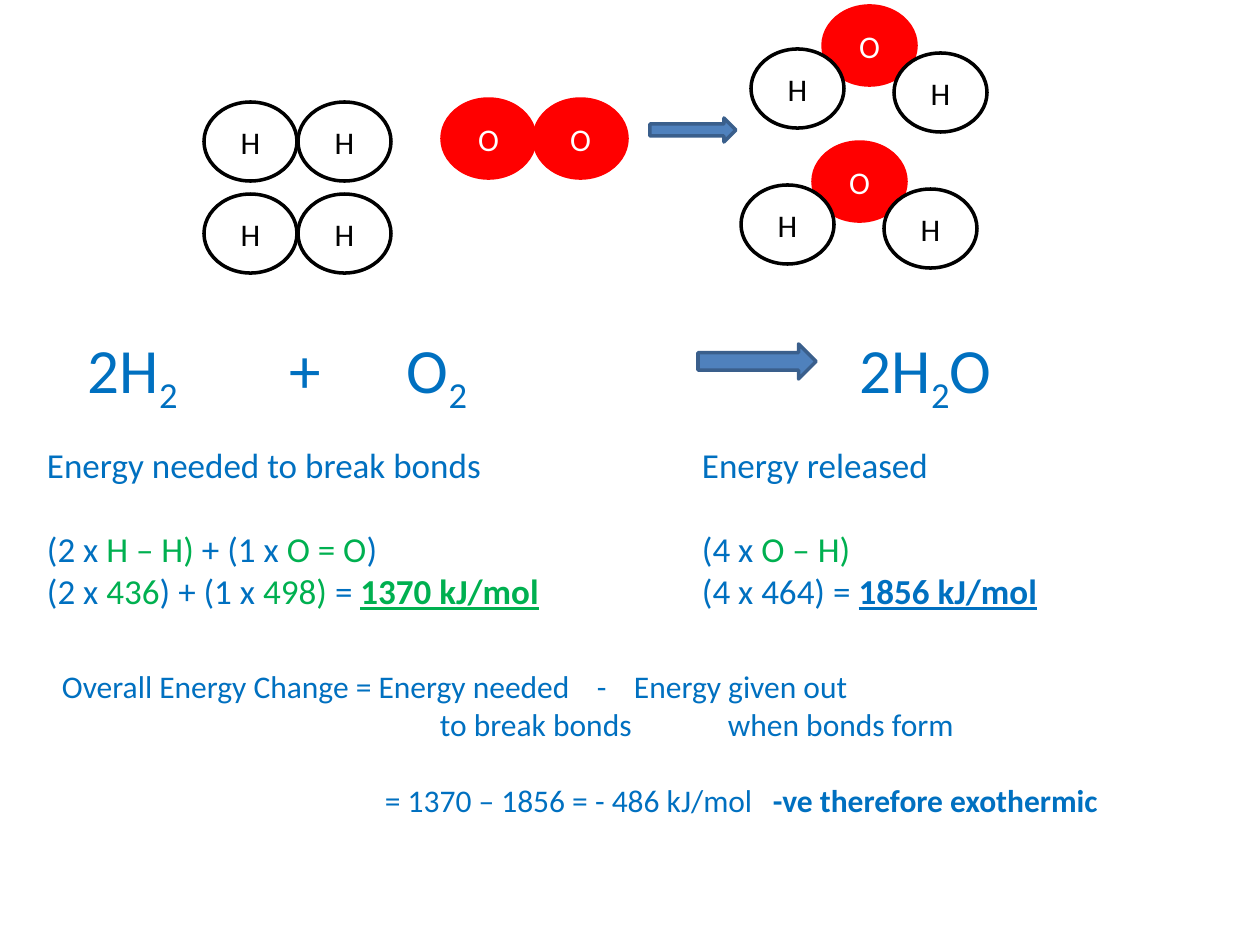
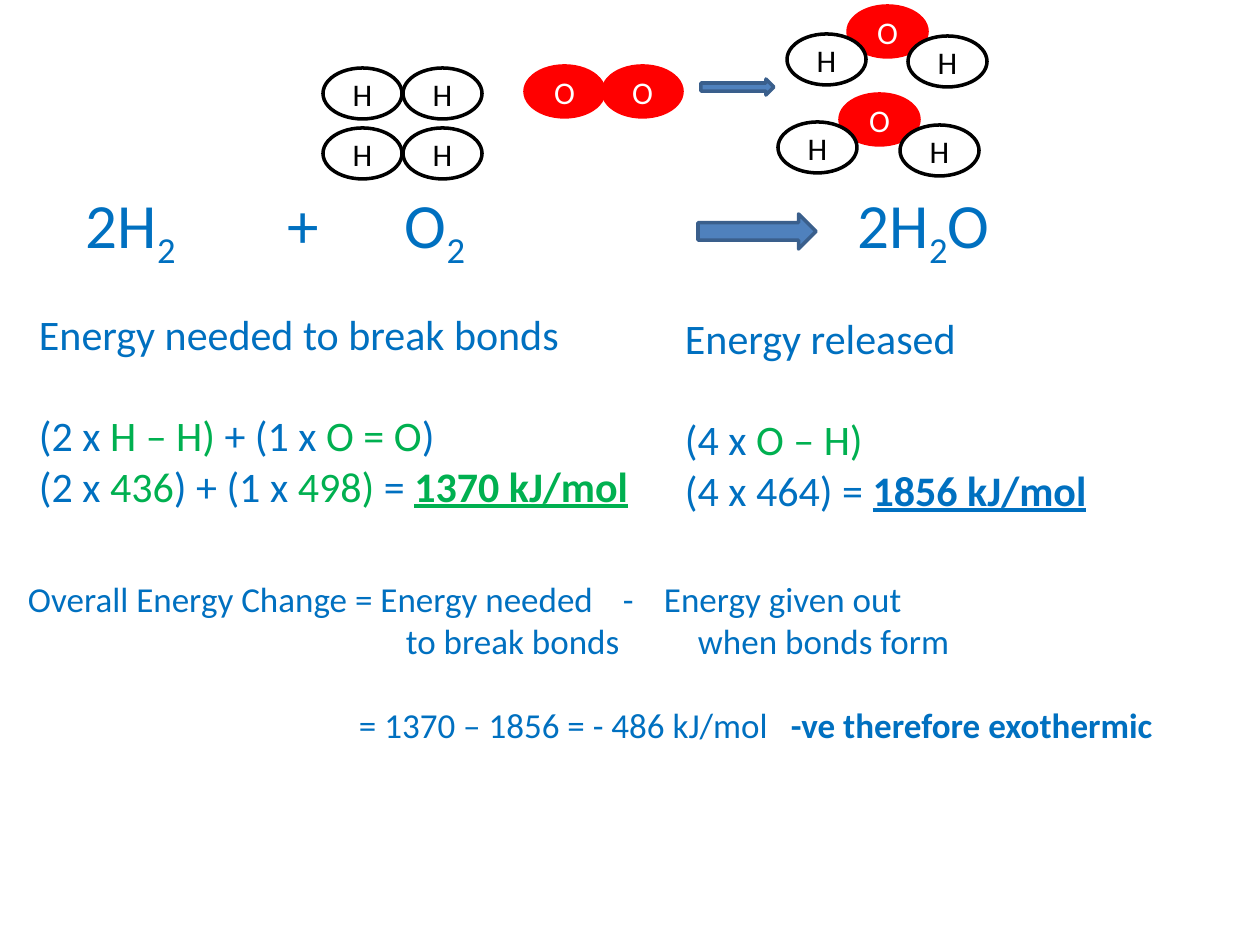
from dataclasses import dataclass
from typing import NamedTuple

from lxml import etree
from pptx import Presentation
from pptx.dml.color import RGBColor
from pptx.enum.shapes import MSO_SHAPE
from pptx.enum.text import MSO_ANCHOR, PP_ALIGN
from pptx.oxml.ns import qn
from pptx.util import Emu, Pt

ELLIPSE, RIGHT_ARROW = MSO_SHAPE.OVAL, MSO_SHAPE.RIGHT_ARROW
CENTER, MIDDLE, TOP = PP_ALIGN.CENTER, MSO_ANCHOR.MIDDLE, MSO_ANCHOR.TOP

# Shared style
EMU_PER_PX = 914400 / 126
FONT = "Calibri"
BLUE, GREEN = "0070C0", "00B050"
WHITE, BLACK, RED = "FFFFFF", "000000", "FF0000"
ARROW_FILL, ARROW_LINE = "4F81BD", "3A5F8C"
LINE_HEIGHT = 1.22
INSET, INDENTED_INSET = 13, 28


class Box(NamedTuple):
    left: int
    top: int
    width: int
    height: int


class Span(NamedTuple):
    text: str
    color: str = BLUE
    bold: bool = False
    underline: bool = False
    subscript: bool = False


class Line(NamedTuple):
    spans: list[Span]
    tabs: tuple[int, ...] = ()
    gap_before: float = 0  # in points


class Atom(NamedTuple):
    symbol: str
    left: int
    top: int


@dataclass
class Layout:
    diagram: Box
    equation: Box
    equation_arrow: Box
    needed: Box
    released: Box
    energy_size: int
    summary: Box
    summary_size: int
    summary_tabs: list[tuple[int, ...]]


# Reaction diagram, measured on a canvas that each slide scales to its frame
CANVAS_WIDTH, CANVAS_HEIGHT = 784, 267
ATOM_WIDTH, ATOM_HEIGHT = 93, 79
REACTION_ARROW = Box(446, 112, 86, 24)
ATOM_COLORS = {"H": (WHITE, BLACK, BLACK), "O": (RED, RED, WHITE)}  # fill, line, text


def water(left: int, top: int) -> list[Atom]:
    return [Atom("O", left, top), Atom("H", left + 71, top + 47),
            Atom("H", left - 72, top + 43)]


ATOMS = [
    *(Atom("H", left, top) for top in (96, 188) for left in (0, 94)),
    Atom("O", 238, 93), Atom("O", 330, 93),
    *water(619, 0), *water(609, 136),
]

# Wording
TWO = Span("2", subscript=True)
EQUATION = [Span("2H"), TWO, Span("\t+\tO"), TWO, Span("\t2H"), TWO, Span("O")]
EQUATION_TABS = (202, 319, 772)
NEEDED = [
    [Span("Energy needed to break bonds")],
    [Span("(2 x "), Span("H – H) ", GREEN), Span("+ (1 x "),
     Span("O = O", GREEN), Span(")")],
    [Span("(2 x "), Span("436", GREEN), Span(") + (1 x "), Span("498) ", GREEN),
     Span("= "), Span("1370 kJ/mol", GREEN, bold=True, underline=True)],
]
RELEASED = [
    [Span("Energy released")],
    [Span("(4 x "), Span("O – H)", GREEN)],
    [Span("(4 x 464) = "), Span("1856 kJ/mol", bold=True, underline=True)],
]
SUMMARY = [
    [Span("Overall Energy Change = Energy needed\t-\tEnergy given out")],
    [Span("\tto break bonds\twhen bonds form")],
    [Span("\t= 1370 – 1856 = - 486 kJ/mol\t"),
     Span("-ve therefore exothermic", bold=True)],
]

LAYOUTS = [
    Layout(
        diagram=Box(204, 6, 784, 267),
        equation=Box(60, 324, 1134, 129),
        equation_arrow=Box(698, 344, 118, 35),
        needed=Box(34, 437, 616, 183),
        released=Box(689, 437, 553, 183),
        energy_size=20,
        summary=Box(34, 661, 1181, 165),
        summary_size=18,
        summary_tabs=[(535, 572), (378, 666), (323, 711)],
    ),
    Layout(
        diagram=Box(323, 6, 665, 173),
        equation=Box(58, 179, 1134, 129),
        equation_arrow=Box(698, 214, 118, 35),
        needed=Box(26, 302, 616, 267),
        released=Box(672, 306, 553, 217),
        energy_size=24,
        summary=Box(0, 571, 1260, 183),
        summary_size=20,
        summary_tabs=[(595, 636), (378, 670), (331, 763)],
    ),
]


def px(length: float) -> Emu:
    return Emu(round(length * EMU_PER_PX))


def rgb(color: str) -> RGBColor:
    return RGBColor.from_string(color)


def emu_box(box: Box) -> list[Emu]:
    return [px(length) for length in box]


def add_figure(page, kind, box: Box, fill: str, line: str):
    figure = page.shapes.add_shape(kind, *emu_box(box))
    figure.shadow.inherit = False
    figure.fill.solid()
    figure.fill.fore_color.rgb = rgb(fill)
    figure.line.color.rgb = rgb(line)
    figure.line.width = Pt(2)
    return figure


def add_arrow(page, box: Box) -> None:
    add_figure(page, RIGHT_ARROW, box, ARROW_FILL, ARROW_LINE)


def set_font(para, size: int, color: str) -> None:
    para.font.name = FONT
    para.font.size = Pt(size)
    para.font.color.rgb = rgb(color)


def add_diagram(page, frame: Box) -> None:
    across, down = frame.width / CANVAS_WIDTH, frame.height / CANVAS_HEIGHT

    def place(left: int, top: int, width: int, height: int) -> Box:
        return Box(round(frame.left + left * across), round(frame.top + top * down),
                   round(width * across), round(height * down))

    add_arrow(page, place(*REACTION_ARROW))
    for atom in ATOMS:
        fill, line, text_color = ATOM_COLORS[atom.symbol]
        box = place(atom.left, atom.top, ATOM_WIDTH, ATOM_HEIGHT)
        ball = add_figure(page, ELLIPSE, box, fill, line)
        ball.text_frame.vertical_anchor = MIDDLE
        para = ball.text_frame.paragraphs[0]
        para.alignment = CENTER
        set_font(para, 18, text_color)
        para.add_run().text = atom.symbol


def set_tabs(para, positions: tuple[int, ...]) -> None:
    tab_list = etree.SubElement(para._p.get_or_add_pPr(), qn("a:tabLst"))
    for position in positions:
        etree.SubElement(tab_list, qn("a:tab"), pos=str(px(position)), algn="l")


def add_text(page, box: Box, lines: list[Line], size: int, inset: int = INSET) -> None:
    frame = page.shapes.add_textbox(*emu_box(box)).text_frame
    frame.word_wrap = True
    frame.vertical_anchor = TOP
    frame.margin_left = px(inset)
    for index, line in enumerate(lines):
        para = frame.add_paragraph() if index else frame.paragraphs[0]
        para.space_before = Pt(line.gap_before)
        if line.tabs:
            set_tabs(para, line.tabs)
        set_font(para, size, BLUE)
        for span in line.spans:
            run = para.add_run()
            run.text = span.text
            if span.color != BLUE:
                run.font.color.rgb = rgb(span.color)
            if span.bold:
                run.font.bold = True
            if span.underline:
                run.font.underline = True
            if span.subscript:
                run._r.get_or_add_rPr().set("baseline", "-25000")


def add_energy(page, box: Box, rows: list[list[Span]], size: int) -> None:
    heading, bonds, total = rows
    lines = [Line(heading), Line(bonds, gap_before=LINE_HEIGHT * size), Line(total)]
    add_text(page, box, lines, size)


def add_summary(page, layout: Layout) -> None:
    gaps = (0, 0, LINE_HEIGHT * layout.summary_size)
    lines = [Line(*parts) for parts in zip(SUMMARY, layout.summary_tabs, gaps)]
    add_text(page, layout.summary, lines, layout.summary_size, INDENTED_INSET)


def build_page(deck, layout: Layout) -> None:
    page = deck.slides.add_slide(deck.slide_layouts[6])
    # Balanced equation
    equation = Line(EQUATION, EQUATION_TABS, gap_before=3)
    add_text(page, layout.equation, [equation], 36, INDENTED_INSET)
    add_arrow(page, layout.equation_arrow)
    # Molecules
    add_diagram(page, layout.diagram)
    # Energy in, energy out and the difference
    add_energy(page, layout.needed, NEEDED, layout.energy_size)
    add_energy(page, layout.released, RELEASED, layout.energy_size)
    add_summary(page, layout)


def main() -> None:
    deck = Presentation()
    deck.slide_width, deck.slide_height = px(1260), px(945)
    for layout in LAYOUTS:
        build_page(deck, layout)
    deck.save("out.pptx")


if __name__ == "__main__":
    main()
